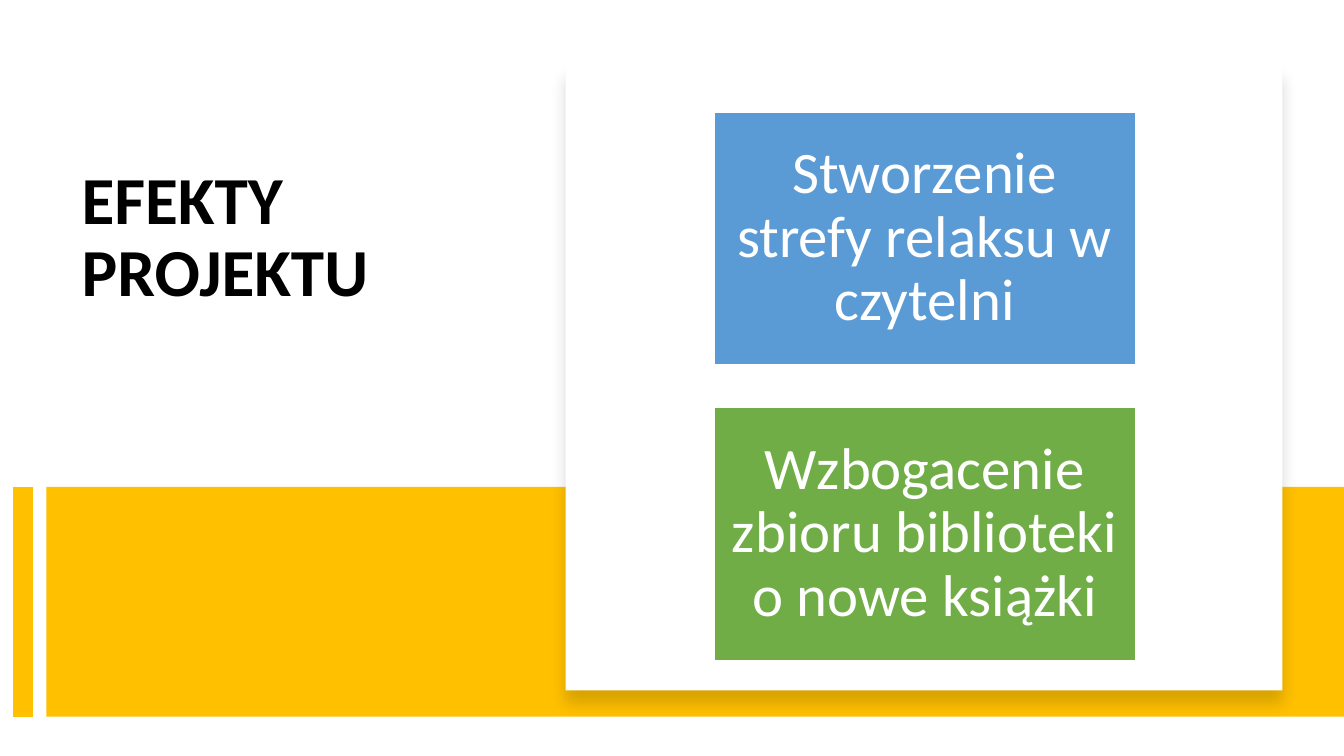
import pptx
import pptx.util
import pptx.dml.color
import pptx.enum.shapes
import pptx.enum.text
import pptx.oxml
import pptx.oxml.ns

Inches, Pt = pptx.util.Inches, pptx.util.Pt
RGB = pptx.dml.color.RGBColor
Kind = pptx.enum.shapes.MSO_SHAPE
Align = pptx.enum.text.PP_ALIGN
Anchor = pptx.enum.text.MSO_ANCHOR

BLACK = RGB(0, 0, 0)
WHITE = RGB(255, 255, 255)
GOLD = RGB(0xFF, 0xC0, 0x00)
BLUE = RGB(0x5B, 0x9B, 0xD5)
GREEN = RGB(0x70, 0xAD, 0x47)

TITLE = "EFEKTY PROJEKTU"
EFFECTS = [
    ("Stworzenie strefy relaksu w czytelni", BLUE),
    ("Wzbogacenie zbioru biblioteki o nowe książki", GREEN),
]

WIDTH, HEIGHT = 13.33, 7.5
BAND_TOP, BAND_END = 4.83, 7.11
BAND_LEFT, BAR_X = 0.46, 0.23
CARD = (5.61, 0.64, 7.11, 6.21)
BOX_X, BOX_Y, BOX_W, BOX_H = 7.08, 1.11, 4.18, 2.51
STEP = 2.93

SHADOW = (
    '<a:outerShdw %s blurRad="%d" dist="%d" dir="5400000" algn="t" rotWithShape="0">'
    '<a:srgbClr val="000000"><a:alpha val="15000"/></a:srgbClr></a:outerShdw>'
    % (pptx.oxml.ns.nsdecls("a"), Pt(11), Pt(10))
)


def write(shape, text, size, color, bold=False, align=Align.LEFT,
          anchor=Anchor.TOP, inset=None):
    frame = shape.text_frame
    frame.word_wrap = True
    frame.auto_size = pptx.enum.text.MSO_AUTO_SIZE.NONE
    frame.vertical_anchor = anchor
    if inset is not None:
        frame.margin_left = frame.margin_right = Inches(inset)
        frame.margin_top = frame.margin_bottom = Inches(inset)
    para = frame.paragraphs[0]
    para.alignment = align
    para.line_spacing = 0.9
    run = para.add_run()
    run.text = text
    font = run.font
    font.name, font.size, font.bold = "Calibri", Pt(size), bold
    font.color.rgb = color


def block(slide, left, top, width, height, fill, line=None):
    shape = slide.shapes.add_shape(
        Kind.RECTANGLE, *map(Inches, (left, top, width, height)))
    shape.shadow.inherit = False
    shape.fill.solid()
    shape.fill.fore_color.rgb = fill
    if line is None:
        shape.line.fill.background()
    else:
        shape.line.color.rgb = line
        shape.line.width = Pt(1)
    return shape


def main():
    deck = pptx.Presentation()
    deck.slide_width, deck.slide_height = Inches(WIDTH), Inches(HEIGHT)
    slide = deck.slides.add_slide(deck.slide_layouts[5])

    title = slide.shapes.title
    title.left, title.top = Inches(0.71), Inches(1.6)
    title.width, title.height = Inches(4.15), Inches(2.94)
    write(title, TITLE, 48, BLACK, bold=True)

    block(slide, BAND_LEFT, BAND_TOP, WIDTH - BAND_LEFT, BAND_END - BAND_TOP, GOLD)
    bar = slide.shapes.add_connector(
        pptx.enum.shapes.MSO_CONNECTOR.STRAIGHT,
        *map(Inches, (BAR_X, BAND_TOP, BAR_X, BAND_END)))
    bar.line.color.rgb = GOLD
    bar.line.width = Pt(14)
    props = bar._element.spPr
    props.append(pptx.oxml.parse_xml("<a:effectLst %s/>" % pptx.oxml.ns.nsdecls("a")))

    card = block(slide, *CARD, WHITE)
    effects = card._element.spPr.find(pptx.oxml.ns.qn("a:effectLst"))
    effects.append(pptx.oxml.parse_xml(SHADOW))

    for i, (text, fill) in enumerate(EFFECTS):
        box = block(slide, BOX_X, BOX_Y + i * STEP, BOX_W, BOX_H, fill, WHITE)
        write(box, text, 42, WHITE, align=Align.CENTER,
              anchor=Anchor.MIDDLE, inset=0.16)

    deck.save("out.pptx")


if __name__ == "__main__":
    main()
